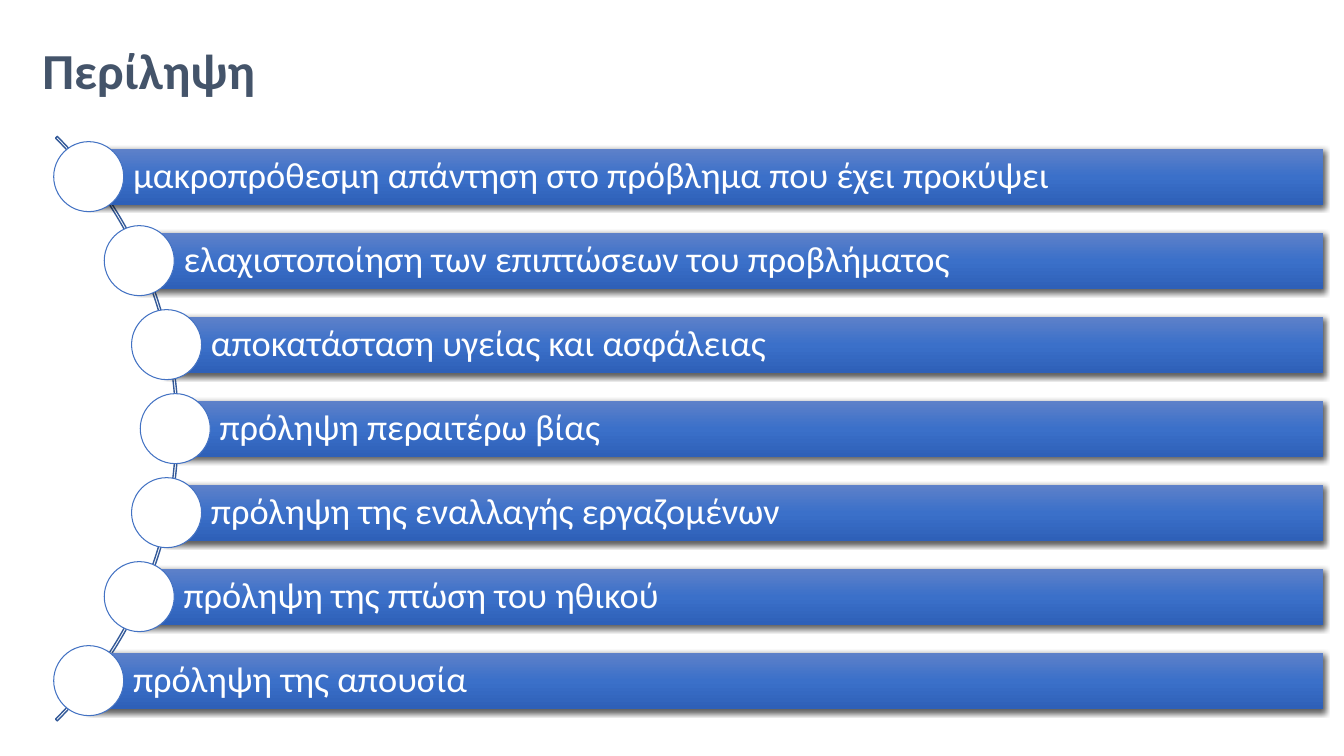
from math import sqrt

from lxml import etree
from pptx import Presentation
from pptx.dml.color import RGBColor
from pptx.enum.shapes import MSO_SHAPE
from pptx.enum.text import MSO_ANCHOR, PP_ALIGN
from pptx.oxml.ns import qn
from pptx.util import Pt

TITLE = "Περίληψη"
GOALS = [
    "μακροπρόθεσμη απάντηση στο πρόβλημα που έχει προκύψει",
    "ελαχιστοποίηση των επιπτώσεων του προβλήματος",
    "αποκατάσταση υγείας και ασφάλειας",
    "πρόληψη περαιτέρω βίας",
    "πρόληψη της εναλλαγής εργαζομένων",
    "πρόληψη της πτώση του ηθικού",
    "πρόληψη της απουσία",
]

FONT = "Calibri"
WHITE = RGBColor(0xFF, 0xFF, 0xFF)
BLACK = RGBColor(0x00, 0x00, 0x00)
TITLE_COLOR = RGBColor(0x44, 0x54, 0x6A)
ARC_LINE = RGBColor(0x34, 0x5A, 0x99)
CIRCLE_LINE = RGBColor(0x43, 0x72, 0xC3)
BAR_STOPS = [
    (0, RGBColor(0x5E, 0x81, 0xC9)),
    (50, RGBColor(0x3B, 0x70, 0xC9)),
    (100, RGBColor(0x2E, 0x60, 0xB8)),
]

RECTANGLE, OVAL, BLOCK_ARC = MSO_SHAPE.RECTANGLE, MSO_SHAPE.OVAL, MSO_SHAPE.BLOCK_ARC
MIDDLE, LEFT = MSO_ANCHOR.MIDDLE, PP_ALIGN.LEFT
DOWNWARD = "5400000"  # 90 degrees

# Circles sit on a curve around a centre left of the slide (points)
CENTER_X, CENTER_Y = -167.8, 306.2
ARC_SIZE = 590.4
CURVE_RADIUS = 293
ROW_PITCH = 60
BAR_RIGHT, BAR_HEIGHT = 945.2, 40
CIRCLE_SIZE = 50


def add_plain_shape(shapes, kind, left, top, width, height):
    shape = shapes.add_shape(kind, Pt(left), Pt(top), Pt(width), Pt(height))
    shape.shadow.inherit = False
    return shape


def add_color(parent, color):
    return etree.SubElement(parent, qn("a:srgbClr"), val=str(color))


def style_bar(bar):
    """Give the bar its three-stop gradient and soft shadow."""
    bar.line.fill.background()
    properties = bar._element.spPr
    gradient = etree.Element(qn("a:gradFill"), rotWithShape="1")
    stops = etree.SubElement(gradient, qn("a:gsLst"))
    for percent, color in BAR_STOPS:
        add_color(etree.SubElement(stops, qn("a:gs"), pos=str(percent * 1000)), color)
    etree.SubElement(gradient, qn("a:lin"), ang=DOWNWARD, scaled="0")
    properties.find(qn("a:ln")).addprevious(gradient)

    shadow = etree.SubElement(
        properties.find(qn("a:effectLst")), qn("a:outerShdw"),
        blurRad=str(Pt(4.5)), dist=str(Pt(1.5)), dir=DOWNWARD,
        algn="ctr", rotWithShape="0")
    etree.SubElement(add_color(shadow, BLACK), qn("a:alpha"), val="63000")


def write_goal(bar, text):
    frame = bar.text_frame
    frame.word_wrap = True
    frame.vertical_anchor = MIDDLE
    frame.margin_left = Pt(31.7)
    frame.margin_top = frame.margin_right = frame.margin_bottom = Pt(5)
    paragraph = frame.paragraphs[0]
    paragraph.text = text
    paragraph.alignment = LEFT
    paragraph.line_spacing = 0.9
    paragraph.font.name = FONT
    paragraph.font.size = Pt(26)
    paragraph.font.color.rgb = WHITE


def add_arc(shapes):
    arc = add_plain_shape(shapes, BLOCK_ARC, CENTER_X - ARC_SIZE / 2,
                          CENTER_Y - ARC_SIZE / 2, ARC_SIZE, ARC_SIZE)
    for index, value in enumerate((189, 27, 0.003)):
        arc.adjustments[index] = value
    arc.fill.background()
    arc.line.color.rgb = ARC_LINE
    arc.line.width = Pt(1)


def add_goal(shapes, text, offset):
    """Add a bar and its circle, offset vertically from the curve's centre."""
    x = CENTER_X + sqrt(CURVE_RADIUS ** 2 - offset ** 2)
    y = CENTER_Y + offset
    bar = add_plain_shape(shapes, RECTANGLE, x, y - BAR_HEIGHT / 2,
                          BAR_RIGHT - x, BAR_HEIGHT)
    style_bar(bar)
    write_goal(bar, text)

    circle = add_plain_shape(shapes, OVAL, x - CIRCLE_SIZE / 2, y - CIRCLE_SIZE / 2,
                             CIRCLE_SIZE, CIRCLE_SIZE)
    circle.fill.solid()
    circle.fill.fore_color.rgb = WHITE
    circle.line.color.rgb = CIRCLE_LINE
    circle.line.width = Pt(0.75)


def set_title(title):
    title.left, title.top, title.width, title.height = Pt(23), Pt(14.4), Pt(928), Pt(70)
    title.text_frame.vertical_anchor = MIDDLE
    paragraph = title.text_frame.paragraphs[0]
    paragraph.text = TITLE
    paragraph.alignment = LEFT
    paragraph.font.name = FONT
    paragraph.font.size = Pt(36)
    paragraph.font.bold = True
    paragraph.font.color.rgb = TITLE_COLOR


def main():
    presentation = Presentation()
    presentation.slide_width, presentation.slide_height = Pt(960), Pt(540)
    slide = presentation.slides.add_slide(presentation.slide_layouts.get_by_name("Title Only"))
    set_title(slide.shapes.title)
    add_arc(slide.shapes)
    middle_row = (len(GOALS) - 1) / 2
    for row, text in enumerate(GOALS):
        add_goal(slide.shapes, text, (row - middle_row) * ROW_PITCH)
    presentation.save("out.pptx")


if __name__ == "__main__":
    main()
